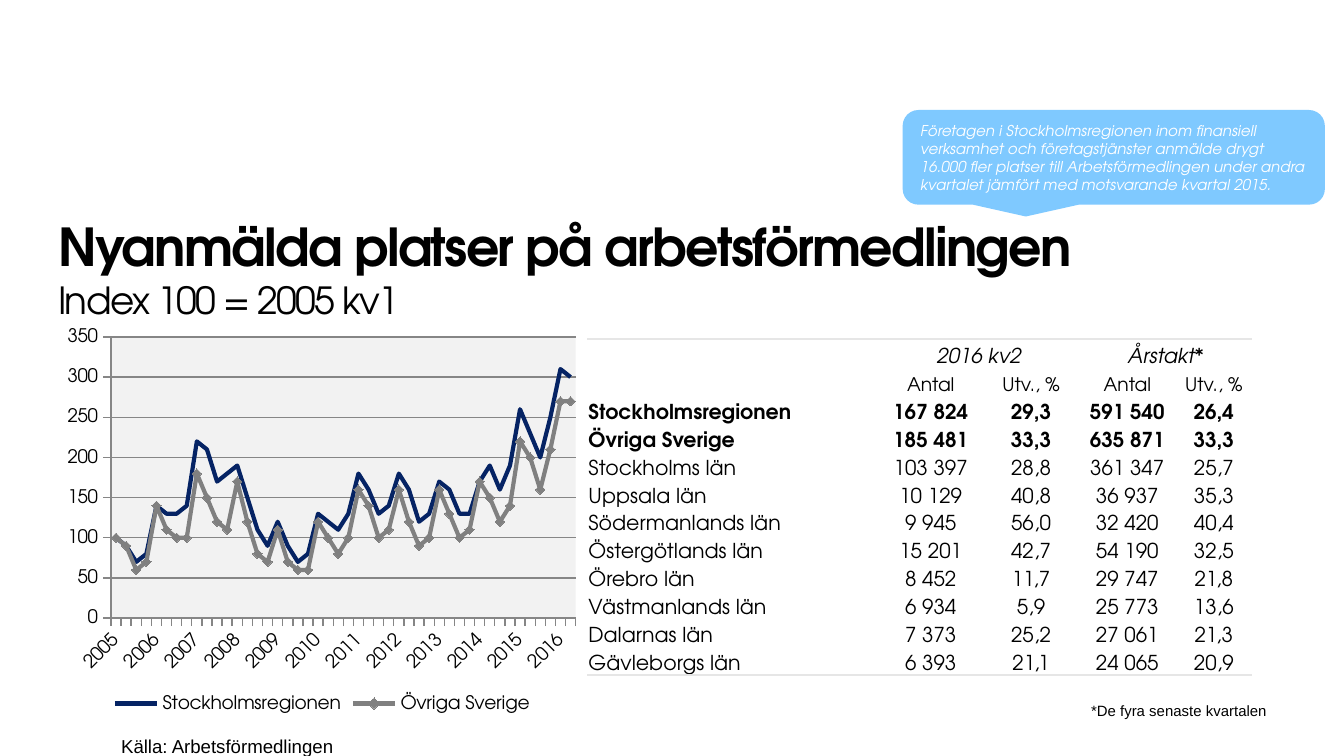
"""Build a slide on newly registered vacancies: index chart, county table and callout."""
from dataclasses import dataclass

from pptx import Presentation
from pptx import util as u
from pptx.chart import data as chart_data
from pptx.dml import color
from pptx.enum import chart as charts, shapes, text
from pptx.oxml import parse_xml
from pptx.oxml.ns import nsdecls, qn


@dataclass(frozen=True)
class Theme:
    font: str = "TeX Gyre Adventor"
    plain_font: str = "Arial"
    black: str = "000000"
    white: str = "FFFFFF"
    navy: str = "052364"
    grey: str = "808080"
    grid: str = "868686"
    rule: str = "E6E6E6"
    plot: str = "F2F2F2"
    sky: str = "7FC9FF"
    title: int = 28
    subtitle: int = 20
    table: int = 11
    body: int = 10
    small: int = 8


theme = Theme()


def rgb(value):
    return color.RGBColor.from_string(value)


def add_span(para, words, size, bold=False, italic=False, ink=theme.black, name=theme.font):
    span = para.add_run()
    span.text = words
    span.font.size = u.Pt(size)
    span.font.name = name
    span.font.bold = bold
    span.font.italic = italic
    span.font.color.rgb = rgb(ink)
    return span


deck = Presentation()
deck.slide_width, deck.slide_height = u.Cm(25.4), u.Cm(14.29)
page = deck.slides.add_slide(deck.slide_layouts[6])

title_box = page.shapes.add_textbox(u.Cm(1.1), u.Cm(4.05), u.Cm(19.76), u.Cm(2.03))
source_box = page.shapes.add_textbox(u.Cm(2.29), u.Cm(13.46), u.Cm(4.5), u.Cm(1.07))
note_box = page.shapes.add_textbox(u.Cm(20.62), u.Cm(12.75), u.Cm(3.8), u.Cm(1.22))
for box in (title_box, source_box, note_box):
    frame = box.text_frame
    frame.margin_left = frame.margin_right = frame.margin_top = frame.margin_bottom = 0
    frame.word_wrap = True

para = title_box.text_frame.paragraphs[0]
heading = add_span(para, "Nyanmälda platser på arbetsförmedlingen", theme.title, bold=True)
para.add_line_break()
subheading = add_span(para, "Index 100 = 2005 kv1", theme.subtitle)
for span in (heading, subheading):
    span.font._element.set("spc", "-87")

for box, words, size in (
    (source_box, "Källa: Arbetsförmedlingen", theme.body),
    (note_box, "*De fyra senaste kvartalen", theme.small),
):
    para = box.text_frame.paragraphs[0]
    para.line_spacing = u.Pt(24)
    add_span(para, words, size, name=theme.plain_font)

rows = [
    ("", "2016 kv2", "", "Årstakt*", ""),
    ("", "Antal", "Utv., %", "Antal", "Utv., %"),
    ("Stockholmsregionen", "167 824", "29,3", "591 540", "26,4"),
    ("Övriga Sverige", "185 481", "33,3", "635 871", "33,3"),
    ("Stockholms län", "103 397", "28,8", "361 347", "25,7"),
    ("Uppsala län", "10 129", "40,8", "36 937", "35,3"),
    ("Södermanlands län", "9 945", "56,0", "32 420", "40,4"),
    ("Östergötlands län", "15 201", "42,7", "54 190", "32,5"),
    ("Örebro län", "8 452", "11,7", "29 747", "21,8"),
    ("Västmanlands län", "6 934", "5,9", "25 773", "13,6"),
    ("Dalarnas län", "7 373", "25,2", "27 061", "21,3"),
    ("Gävleborgs län", "6 393", "21,1", "24 065", "20,9"),
]
table = page.shapes.add_table(
    len(rows), 5, u.Cm(11.1), u.Cm(6.41), u.Cm(12.57), u.Cm(6.35)
).table
table.first_row = table.horz_banding = False
table._tbl.tblPr.find(qn("a:tableStyleId")).text = "{2D5ABB26-0587-4C30-8999-92F81FD0307C}"
for column, width in zip(table.columns, (5.51, 1.96, 1.83, 1.81, 1.46)):
    column.width = u.Cm(width)
for first in (1, 3):
    table.cell(0, first).merge(table.cell(0, first + 1))

for r, row in enumerate(rows):
    size = theme.body if r == 1 else theme.table
    for c, words in enumerate(row):
        cell = table.cell(r, c)
        cell.margin_left = cell.margin_right = cell.margin_top = u.Cm(0.02)
        cell.margin_bottom = 0
        cell.vertical_anchor = text.MSO_ANCHOR.BOTTOM
        cell.fill.background()
        para = cell.text_frame.paragraphs[0]
        para.alignment = text.PP_ALIGN.CENTER if c else text.PP_ALIGN.LEFT
        if words:
            add_span(para, words, size, bold=r in (2, 3), italic=r == 0)
        else:
            para._p.get_or_add_endParaRPr().set("sz", str(size * 100))
        edge = {0: "lnT", len(rows) - 1: "lnB"}.get(r)
        if edge:
            cell._tc.get_or_add_tcPr().insert(0, parse_xml(
                f'<a:{edge} {nsdecls("a")} w="12700"><a:solidFill>'
                f'<a:srgbClr val="{theme.rule}"/></a:solidFill></a:{edge}>'
            ))

callout = page.shapes.add_shape(
    shapes.MSO_SHAPE.ROUNDED_RECTANGULAR_CALLOUT,
    u.Cm(17.06), u.Cm(2.08), u.Cm(7.98), u.Cm(1.79),
)
callout.shadow.inherit = False
callout.fill.solid()
callout.fill.fore_color.rgb = rgb(theme.sky)
callout.line.fill.background()
callout.text_frame.word_wrap = True
callout.text_frame.vertical_anchor = text.MSO_ANCHOR.MIDDLE
para = callout.text_frame.paragraphs[0]
para.alignment = text.PP_ALIGN.LEFT
add_span(
    para,
    "Företagen i Stockholmsregionen inom finansiell verksamhet och företagstjänster "
    "anmälde drygt 16.000 fler platser till Arbetsförmedlingen under andra kvartalet "
    "jämfört med motsvarande kvartal 2015.",
    theme.small, italic=True, ink=theme.white,
)

stockholm = [
    100, 90, 70, 80, 140, 130, 130, 140, 220, 210, 170, 180, 190, 150, 110, 90,
    120, 90, 70, 80, 130, 120, 110, 130, 180, 160, 130, 140, 180, 160, 120, 130,
    170, 160, 130, 130, 170, 190, 160, 190, 260, 230, 200, 250, 310, 300,
]
others = [
    100, 90, 60, 70, 140, 110, 100, 100, 180, 150, 120, 110, 170, 120, 80, 70,
    110, 70, 60, 60, 120, 100, 80, 100, 160, 140, 100, 110, 160, 120, 90, 100,
    160, 130, 100, 110, 170, 150, 120, 140, 220, 200, 160, 210, 270, 270,
]
index_data = chart_data.CategoryChartData()
index_data.categories = [str(2005 + q // 4) if q % 4 == 0 else "" for q in range(len(others))]
index_data.add_series("Stockholmsregionen", stockholm)
index_data.add_series("Övriga Sverige", others)
chart = page.shapes.add_chart(
    charts.XL_CHART_TYPE.LINE_MARKERS, u.Cm(1.1), u.Cm(6.07), u.Cm(9.98), u.Cm(7.49), index_data
).chart
chart.has_title = False
chart.font.name, chart.font.size = theme.font, u.Pt(theme.body)
chart.font.color.rgb = rgb(theme.black)
chart.has_legend = True
chart.legend.position = charts.XL_LEGEND_POSITION.BOTTOM
chart.legend.include_in_layout = False
chart.plots[0].vary_by_categories = False

for series, ink in zip(chart.plots[0].series, (theme.navy, theme.grey)):
    series.smooth = False
    series.format.line.color.rgb = rgb(ink)
    series.format.line.width = u.Pt(2.25)
    series.marker.style = charts.XL_MARKER_STYLE.NONE
series.marker.style = charts.XL_MARKER_STYLE.DIAMOND
series.marker.size = 5
series.marker.format.fill.solid()
series.marker.format.fill.fore_color.rgb = rgb(theme.grey)
series.marker.format.line.color.rgb = rgb(theme.grey)

years, values = chart.category_axis, chart.value_axis
values.minimum_scale, values.maximum_scale, values.major_unit = 0, 350, 50
values.has_major_gridlines = True
values.tick_labels.number_format = "#,##0"
values.tick_labels.number_format_is_linked = False
for axis in (years, values):
    axis.major_tick_mark = charts.XL_TICK_MARK.OUTSIDE
    axis.tick_labels.font.size = u.Pt(theme.body)
for stroke in (years.format.line, values.format.line, values.major_gridlines.format.line):
    stroke.color.rgb = rgb(theme.grid)
    stroke.width = u.Pt(0.75)
years._element.find(qn("c:txPr")).find(qn("a:bodyPr")).set("rot", "-2700000")

plot_area = chart._chartSpace.chart.plotArea
for layout in plot_area.findall(qn("c:layout")):
    plot_area.remove(layout)
bounds = "".join(
    f'<c:{key} val="{value}"/>' for key, value in (("x", 0.1), ("y", 0.04), ("w", 0.88), ("h", 0.71))
)
plot_area.insert(0, parse_xml(
    f'<c:layout {nsdecls("c")}><c:manualLayout><c:layoutTarget val="inner"/>'
    f'<c:xMode val="edge"/><c:yMode val="edge"/>{bounds}</c:manualLayout></c:layout>'
))
plot_area.append(parse_xml(
    f'<c:spPr {nsdecls("c", "a")}><a:solidFill><a:srgbClr val="{theme.plot}"/></a:solidFill></c:spPr>'
))

deck.save("out.pptx")
